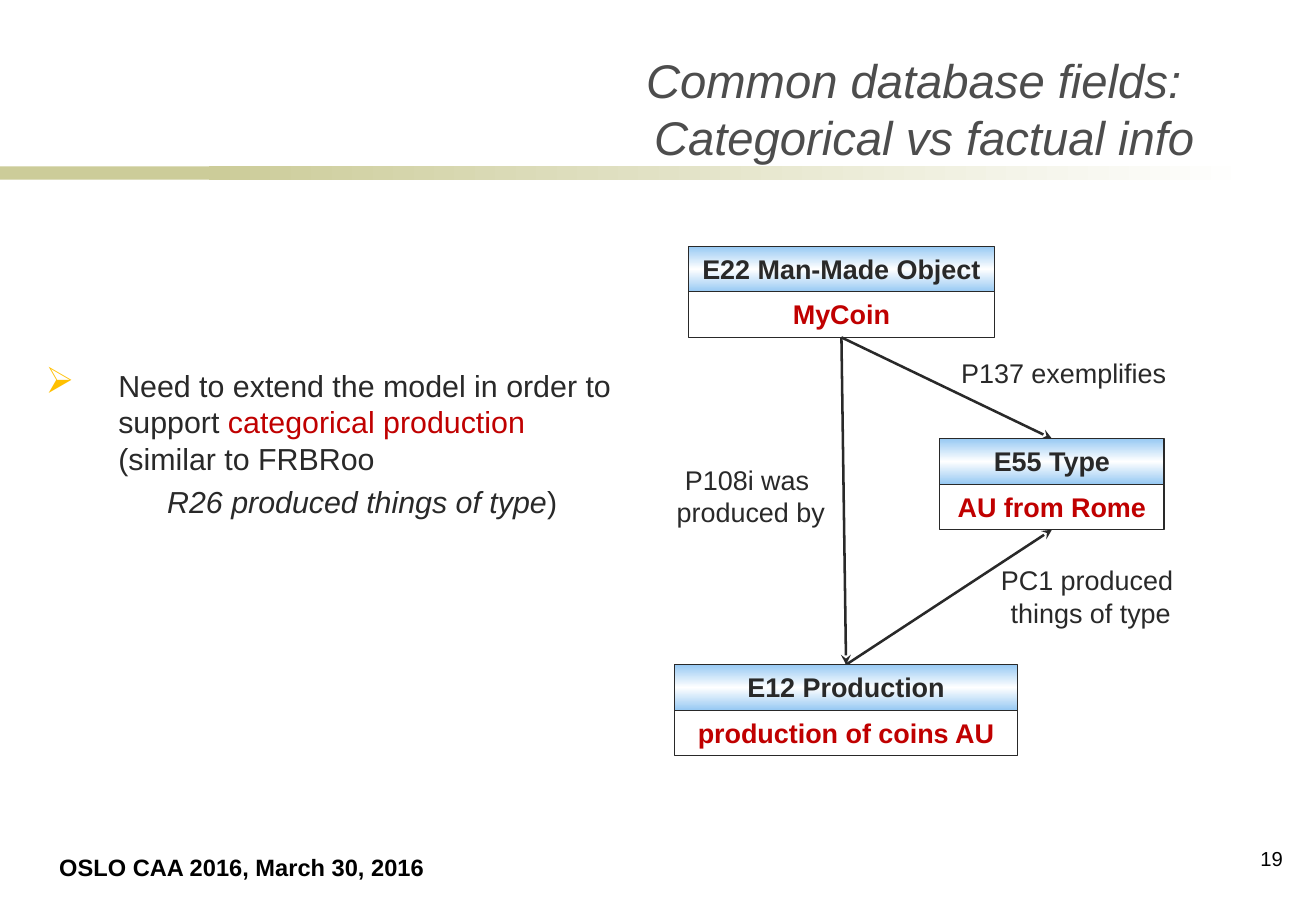
from lxml import etree
from pptx import Presentation
from pptx.dml.color import RGBColor
from pptx.enum.shapes import MSO_CONNECTOR, MSO_SHAPE
from pptx.enum.text import MSO_ANCHOR, MSO_AUTO_SIZE, PP_ALIGN
from pptx.oxml.ns import qn
from pptx.util import Pt

RECTANGLE = MSO_SHAPE.RECTANGLE
STRAIGHT = MSO_CONNECTOR.STRAIGHT
TOP, MIDDLE, BOTTOM = MSO_ANCHOR.TOP, MSO_ANCHOR.MIDDLE, MSO_ANCHOR.BOTTOM
LEFT, CENTER, RIGHT = PP_ALIGN.LEFT, PP_ALIGN.CENTER, PP_ALIGN.RIGHT
FIXED = MSO_AUTO_SIZE.NONE

BLACK = RGBColor(0x00, 0x00, 0x00)
WHITE = RGBColor(0xFF, 0xFF, 0xFF)
INK = RGBColor(0x29, 0x29, 0x29)
GRAY = RGBColor(0x4D, 0x4D, 0x4D)
RED = RGBColor(0xC0, 0x00, 0x00)
GOLD = RGBColor(0xFF, 0xC0, 0x00)
OLIVE = RGBColor(0xCC, 0xCC, 0x99)
SKY = RGBColor(0x97, 0xC9, 0xF3)

ROW_HEIGHT = 27
TOP_SITE, BOTTOM_SITE = 0, 2  # connection sites of a rectangle


def set_format(target, values):
    for name, value in values.items():
        if name == "color":
            target.color.rgb = value
        else:
            setattr(target, name, value)


def add_element(parent, tag, **attributes):
    return etree.SubElement(parent, qn(tag), attributes)


def write(shape, lines, align, font, anchor=TOP, wrap=True):
    """Fill a shape with one paragraph per line, all in one font."""
    frame = shape.text_frame
    set_format(frame, {"auto_size": FIXED, "word_wrap": wrap, "vertical_anchor": anchor})
    frame.text = "\n".join(lines)
    for para in frame.paragraphs:
        para.alignment = align
        for span in para.runs:
            set_format(span.font, {"name": "Arial", **font})


def add_text(page, box, lines, align, font, anchor=TOP, wrap=True):
    shape = page.shapes.add_textbox(*map(Pt, box))
    write(shape, lines, align, font, anchor, wrap)


def add_rectangle(page, box):
    shape = page.shapes.add_shape(RECTANGLE, *map(Pt, box))
    shape.shadow.inherit = False
    return shape


def fill_gradient(shape, colors, angle):
    """Spread the colours evenly over the shape."""
    shape.fill.gradient()
    shape.fill.gradient_angle = angle
    stops = shape.element.spPr.find(qn("a:gradFill")).find(qn("a:gsLst"))
    for stop in list(stops):
        stops.remove(stop)
    for index, color in enumerate(colors):
        position = 100000 * index // (len(colors) - 1)
        stop = add_element(stops, "a:gs", pos=str(position))
        add_element(stop, "a:srgbClr", val=str(color))


def add_band(page, left, top, width, height):
    solid = add_rectangle(page, (left, top, 182, height))
    solid.fill.solid()
    solid.fill.fore_color.rgb = OLIVE
    solid.line.fill.background()
    fade = add_rectangle(page, (left + 124, top, width - 124, height))
    fill_gradient(fade, (OLIVE, WHITE), 0)
    fade.line.fill.background()


def place_title(page, left, top, width, height):
    title = page.shapes.title
    set_format(title, {"left": Pt(left), "top": Pt(top), "width": Pt(width), "height": Pt(height)})
    write(title, ["Common database fields: \vCategorical vs factual info"], RIGHT,
          {"size": Pt(28), "italic": True, "color": GRAY}, BOTTOM)


def add_body(page, left, top, width, height):
    frame = page.shapes.add_textbox(*map(Pt, (left, top, width, height))).text_frame
    frame.word_wrap = True
    need, relation = frame.paragraphs[0], frame.add_paragraph()

    # Hanging bullet
    hang = Pt(43)
    settings = need._p.get_or_add_pPr()
    settings.set("marL", str(hang))
    settings.set("indent", str(-hang))
    add_element(add_element(settings, "a:buClr"), "a:srgbClr", val=str(GOLD))
    add_element(settings, "a:buSzPct", val="120000")
    add_element(settings, "a:buChar", char="➢")

    # Relation name, indented deeper
    relation._p.get_or_add_pPr().set("marL", str(Pt(72)))
    relation.space_before = Pt(4)

    spans = (
        (need, "Need to extend the model in order to support ", INK, False),
        (need, "categorical production ", RED, False),
        (need, None, INK, False),
        (need, "(similar to FRBRoo", INK, False),
        (relation, "R26 produced things of type", INK, True),
        (relation, ")", INK, False),
    )
    for para, text, color, italic in spans:
        if text is None:
            para.add_line_break()
            continue
        span = para.add_run()
        span.text = text
        set_format(span.font, {"name": "Arial", "size": Pt(18), "color": color, "italic": italic})


def add_card(page, left, top, width, entity, instance):
    """Entity class above its instance; returns both rows."""
    rows = []
    for index, (text, color) in enumerate(((entity, INK), (instance, RED))):
        row = add_rectangle(page, (left, top + index * ROW_HEIGHT, width, ROW_HEIGHT))
        row.line.color.rgb = INK
        row.line.width = Pt(0.75)
        write(row, [text], CENTER, {"size": Pt(16), "bold": True, "color": color}, wrap=False)
        rows.append(row)
    fill_gradient(rows[0], (SKY, WHITE, SKY), 90)
    rows[1].fill.background()
    return rows


def add_arrow(page, start, start_site, end, end_site, behind):
    arrow = page.shapes.add_connector(STRAIGHT, 0, 0, 0, 0)
    arrow.begin_connect(start, start_site)
    arrow.end_connect(end, end_site)
    arrow.line.color.rgb = INK
    arrow.line.width = Pt(1.5)
    add_element(arrow.line._get_or_add_ln(), "a:tailEnd", type="stealth")
    add_element(arrow.element.spPr, "a:effectLst")
    behind.element.addprevious(arrow.element)


def add_diagram(page, left, top):
    # Cards
    coin_class, coin = add_card(page, left + 8, top, 181.5, "E22 Man-Made Object", "MyCoin")
    type_class, coin_type = add_card(page, left + 157, top + 114, 133, "E55 Type", "AU from Rome")
    production_class, _ = add_card(page, left, top + 248, 203, "E12 Production",
                                   "production of coins AU")

    # Arrows, drawn behind the cards
    for start, start_site, end, end_site in (
        (coin, BOTTOM_SITE, production_class, TOP_SITE),
        (coin, BOTTOM_SITE, type_class, TOP_SITE),
        (production_class, TOP_SITE, coin_type, BOTTOM_SITE),
    ):
        add_arrow(page, start, start_site, end, end_site, coin_class)

    # Arrow labels
    for x, y, width, height, lines in (
        (-7, 125, 104, 46, ["P108i was ", "produced by"]),
        (157, 61.5, 147, 27, ["P137 exemplifies"]),
        (149, 184.5, 195, 46, ["PC1 produced ", "things of type"]),
    ):
        add_text(page, (left + x, top + y, width, height), lines, CENTER,
                 {"size": Pt(16), "color": INK}, MIDDLE)


def add_footer(page, left, top):
    add_text(page, (left, top + 4, 232, 24), ["OSLO CAA 2016, March 30, 2016"], LEFT,
             {"size": Pt(14), "bold": True, "color": BLACK}, wrap=False)
    add_text(page, (left + 704, top, 35.5, 30), ["19"], RIGHT, {"size": Pt(12), "color": BLACK})


def main():
    deck = Presentation()
    deck.slide_width, deck.slide_height = Pt(780), Pt(540)
    page = deck.slides.add_slide(deck.slide_layouts[5])
    add_band(page, 0, 98.6, 742, 8)
    place_title(page, 152, 9.5, 563, 92)
    add_body(page, 20, 214, 372, 100)
    add_diagram(page, 400, 146)
    add_footer(page, 28, 498)
    deck.save("out.pptx")


if __name__ == "__main__":
    main()
